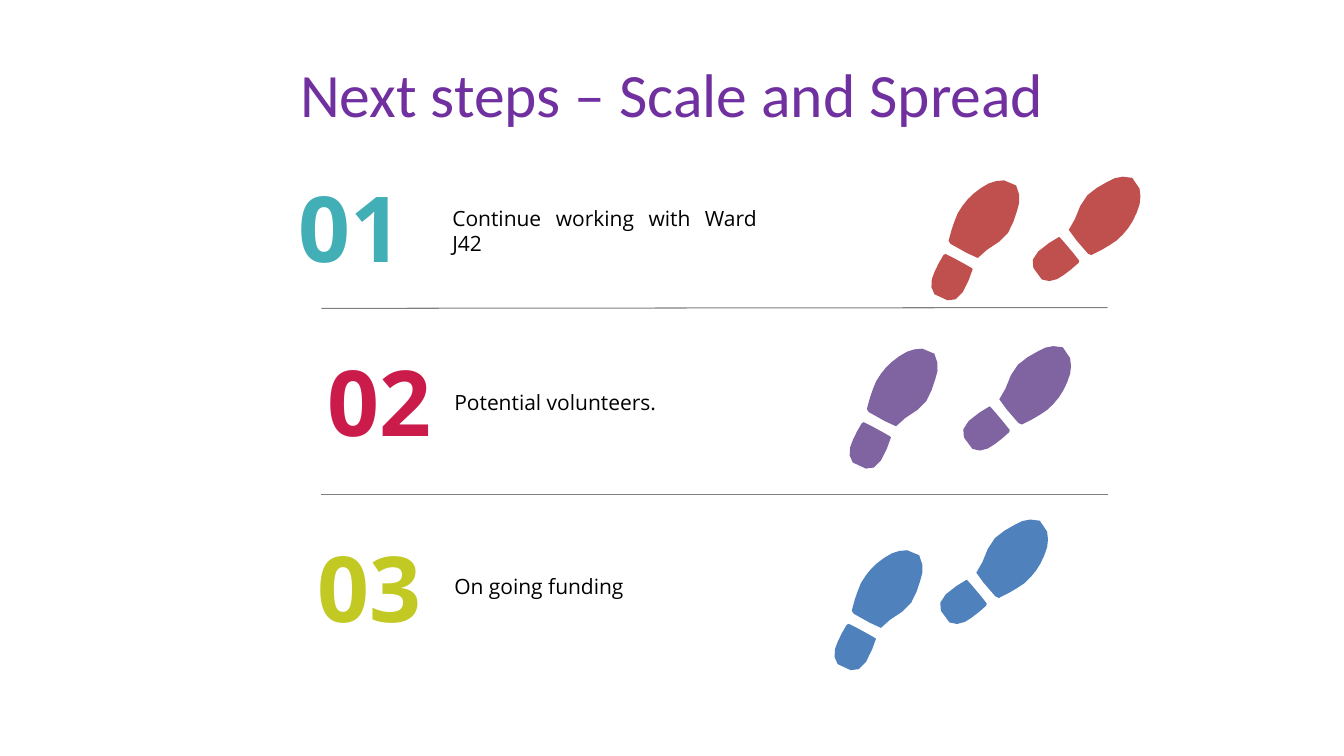
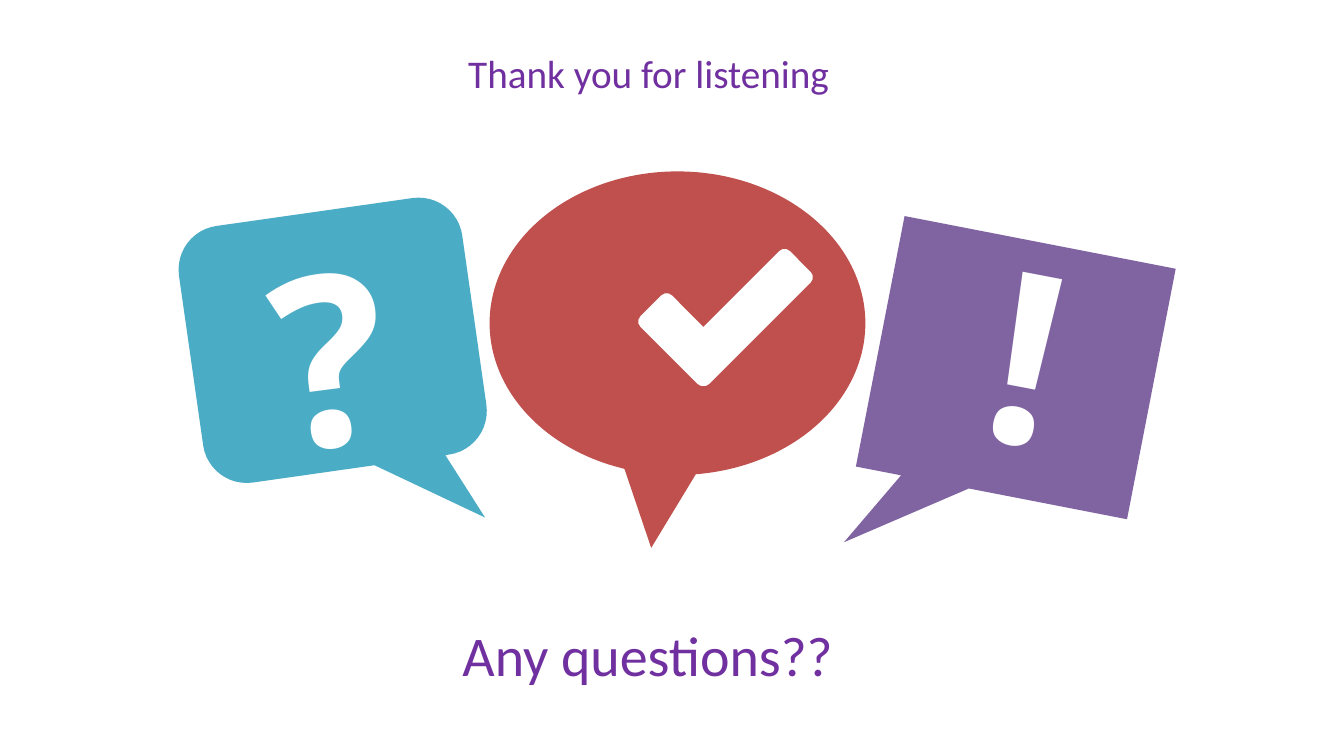
from dataclasses import dataclass
from math import cos, hypot, radians, sin

from lxml.etree import SubElement
from pptx import Presentation
from pptx.dml.color import RGBColor
from pptx.enum.shapes import MSO_CONNECTOR, MSO_SHAPE
from pptx.enum.text import MSO_ANCHOR, MSO_AUTO_SIZE, PP_ALIGN
from pptx.oxml.ns import qn
from pptx.util import Cm, Pt


@dataclass(frozen=True)
class Theme:
    purple: str = "7030A0"
    black: str = "000000"
    white: str = "FFFFFF"
    rule: str = "808080"
    red: str = "C0504D"
    violet: str = "8064A2"
    blue: str = "4F81BD"
    aqua: str = "4BACC6"
    teal: str = "42AFB6"
    crimson: str = "CB1B4A"
    lime: str = "C2C923"
    heading_font: str = "Calibri"
    body_font: str = "Open Sans"
    mark_font: str = "Noto Sans"
    title_size: int = 44
    thanks_size: int = 28
    question_size: int = 40
    number_size: int = 65
    body_size: int = 15
    mark_size: int = 170


THEME = Theme()

# Content: lengths in centimetres, frames are left, top, width, height
STEPS_TITLE = "Next steps – Scale and Spread"
STEPS = [
    dict(number="01", color=THEME.teal, number_at=(6.93, 4.19),
         text="Continue working with Ward J42", text_at=(11.15, 5.05),
         foot_color=THEME.red, left_foot=(24.87, 5.46), right_foot=(27.91, 5.36)),
    dict(number="02", color=THEME.crimson, number_at=(7.65, 8.59),
         text="Potential volunteers.", text_at=(11.2, 9.7),
         foot_color=THEME.violet, left_foot=(22.81, 9.7), right_foot=(26.16, 9.63)),
    dict(number="03", color=THEME.lime, number_at=(7.4, 13.28),
         text="On going funding", text_at=(11.2, 14.33),
         foot_color=THEME.blue, left_foot=(22.43, 14.78), right_foot=(25.58, 14)),
]
NUMBER_SIZE = (3.81, 3.02)
TEXT_SIZE = (8.18, 1.55)
DIVIDERS = [(7.77, 7.75), (12.45, 12.45)]
DIVIDER_LEFT, DIVIDER_RIGHT = 8.1, 27.91

THANKS_TITLE = "Thank you for listening"
CLOSING = "Any questions??"
BUBBLES = [
    (MSO_SHAPE.ROUNDED_RECTANGULAR_CALLOUT, (4.78, 5.31, 7.21, 6.53), 351.9,
     (0.44, 0.76, 0.17), THEME.aqua),
    (MSO_SHAPE.RECTANGULAR_CALLOUT, (22.12, 6.05, 6.96, 6.43), 11,
     (-0.49, 0.8), THEME.violet),
    (MSO_SHAPE.OVAL_CALLOUT, (12.34, 4.32, 9.47, 7.65), 0,
     (-0.07, 0.74), THEME.red),
]
TICK_STROKES = [((16.05, 8, 2.41, 1.12), 45), ((16.76, 7.44, 3.99, 1.12), 135)]
MARKS = [("!", (22.35, 5.08, 7.14, 7.52), 10.9),
         ("?", (4.75, 5.11, 7.14, 7.52), 352.6)]

# Left footprint around the centre of its sole: a start point, then Bezier
# segments (two controls and an end), in units of FOOT_UNIT centimetres
FOOT_UNIT = 0.0254
SAMPLE_LENGTH = 10
RIGHT_TURN = 78.5
SOLE = ((-24, -11), [
    (-21, -16, -17, -19, -13, -23), (-8, -27, -4, -30, 2, -33),
    (6, -35, 12, -36, 17, -36), (22, -36, 26, -34, 29, -31),
    (31, -29, 32, -26, 32, -22), (33, -17, 32, -11, 30, -6),
    (28, 2, 25, 9, 21, 16), (18, 20, 15, 23, 12, 25),
    (8, 28, 4, 31, 0, 33), (-3, 36, -6, 38, -9, 41),
    (-13, 40, -16, 38, -20, 36), (-25, 33, -31, 30, -36, 27),
    (-38, 26, -38, 26, -38, 24), (-37, 21, -36, 17, -35, 13),
    (-32, 5, -30, -4, -24, -11)])
HEEL = ((-24, 75), [
    (-26, 78, -28, 80, -31, 82), (-34, 83, -36, 83, -39, 83),
    (-44, 82, -48, 80, -52, 77), (-54, 75, -55, 72, -55, 70),
    (-56, 64, -54, 60, -52, 55), (-50, 49, -46, 44, -43, 38),
    (-42, 37, -42, 37, -41, 37), (-35, 40, -29, 43, -22, 47),
    (-20, 48, -17, 49, -15, 51), (-14, 51, -14, 52, -14, 52),
    (-15, 56, -16, 59, -18, 63), (-19, 66, -21, 69, -24, 75)])


def rgb(color):
    return RGBColor.from_string(color)


def place(shape, frame):
    shape.left, shape.top, shape.width, shape.height = map(Cm, frame)


def paint(shape, color):
    shape.shadow.inherit = False
    shape.fill.solid()
    shape.fill.fore_color.rgb = rgb(color)
    shape.line.fill.background()


def write(shape, text, font, size, color, bold=False,
          align=PP_ALIGN.CENTER, anchor=MSO_ANCHOR.TOP):
    frame = shape.text_frame
    frame.word_wrap = True
    frame.auto_size = MSO_AUTO_SIZE.NONE
    frame.vertical_anchor = anchor
    para = frame.paragraphs[0]
    para.alignment = align
    span = para.add_run()
    span.text = text
    span.font.name = font
    span.font.size = Pt(size)
    span.font.bold = bold
    span.font.color.rgb = rgb(color)


def add_text(page, frame, *args, **style):
    box = page.shapes.add_textbox(*map(Cm, frame))
    write(box, *args, **style)
    return box


def add_page(deck, title, frame, size, anchor):
    page = deck.slides.add_slide(deck.slide_layouts[5])
    place(page.shapes.title, frame)
    write(page.shapes.title, title, THEME.heading_font, size, THEME.purple,
          anchor=anchor)
    return page


def add_preset(shapes, preset, frame, rotation, color):
    shape = shapes.add_shape(preset, *map(Cm, frame))
    shape.rotation = rotation
    paint(shape, color)
    return shape


def add_divider(page, start_y, end_y):
    line = page.shapes.add_connector(
        MSO_CONNECTOR.STRAIGHT, Cm(DIVIDER_LEFT), Cm(start_y),
        Cm(DIVIDER_RIGHT), Cm(end_y))
    line.line.color.rgb = rgb(THEME.rule)
    line.line.width = Pt(0.75)
    SubElement(line._element.spPr, qn("a:effectLst"))


def curve_points(outline):
    """Sample the Bezier segments of an outline, long ones more often."""
    (x, y), segments = outline
    points = [(x, y)]
    for x1, y1, x2, y2, x3, y3 in segments:
        steps = max(1, round(hypot(x3 - x, y3 - y) / SAMPLE_LENGTH))
        for step in range(1, steps + 1):
            t = step / steps
            u = 1 - t
            weights = (u ** 3, 3 * u * u * t, 3 * u * t * t, t ** 3)
            points.append(tuple(
                sum(w * v for w, v in zip(weights, values))
                for values in ((x, x1, x2, x3), (y, y1, y2, y3))))
        x, y = x3, y3
    return points[:-1]


def add_foot(page, centre, color, is_right):
    """Draw a footprint; the right one is the left one mirrored and turned."""
    turn = radians(RIGHT_TURN if is_right else 0)
    flip = -1 if is_right else 1
    for outline in (SOLE, HEEL):
        points = []
        for x, y in curve_points(outline):
            x *= flip
            points.append((
                Cm(centre[0] + FOOT_UNIT * (x * cos(turn) - y * sin(turn))),
                Cm(centre[1] + FOOT_UNIT * (x * sin(turn) + y * cos(turn)))))
        builder = page.shapes.build_freeform(*points[0])
        builder.add_line_segments(points[1:], close=True)
        paint(builder.convert_to_shape(), color)


def build_steps(deck):
    page = add_page(deck, STEPS_TITLE, (1.7, 0.76, 30.48, 3.18),
                    THEME.title_size, MSO_ANCHOR.MIDDLE)
    for start_y, end_y in DIVIDERS:
        add_divider(page, start_y, end_y)
    for step in STEPS:
        add_foot(page, step["left_foot"], step["foot_color"], False)
        add_foot(page, step["right_foot"], step["foot_color"], True)
        add_text(page, step["number_at"] + NUMBER_SIZE, step["number"],
                 THEME.body_font, THEME.number_size, step["color"], bold=True)
        add_text(page, step["text_at"] + TEXT_SIZE, step["text"],
                 THEME.body_font, THEME.body_size, THEME.black,
                 align=PP_ALIGN.JUSTIFY)


def build_thanks(deck):
    page = add_page(deck, THANKS_TITLE, (7.34, 1.12, 18.01, 1.45),
                    THEME.thanks_size, MSO_ANCHOR.TOP)
    # Speech bubbles
    for preset, frame, rotation, adjustments, color in BUBBLES:
        bubble = add_preset(page.shapes, preset, frame, rotation, color)
        for index, value in enumerate(adjustments):
            bubble.adjustments[index] = value
    # Tick and punctuation marks
    tick = page.shapes.add_group_shape()
    for frame, rotation in TICK_STROKES:
        add_preset(tick.shapes, MSO_SHAPE.ROUNDED_RECTANGLE, frame, rotation,
                   THEME.white)
    for mark, frame, rotation in MARKS:
        box = add_text(page, frame, mark, THEME.mark_font, THEME.mark_size,
                       THEME.white, bold=True)
        box.rotation = rotation
    add_text(page, (9.32, 15.52, 14, 1.96), CLOSING, THEME.heading_font,
             THEME.question_size, THEME.purple)


def main():
    deck = Presentation()
    deck.slide_width, deck.slide_height = Cm(33.87), Cm(19.05)
    build_steps(deck)
    build_thanks(deck)
    deck.save("out.pptx")


if __name__ == "__main__":
    main()
